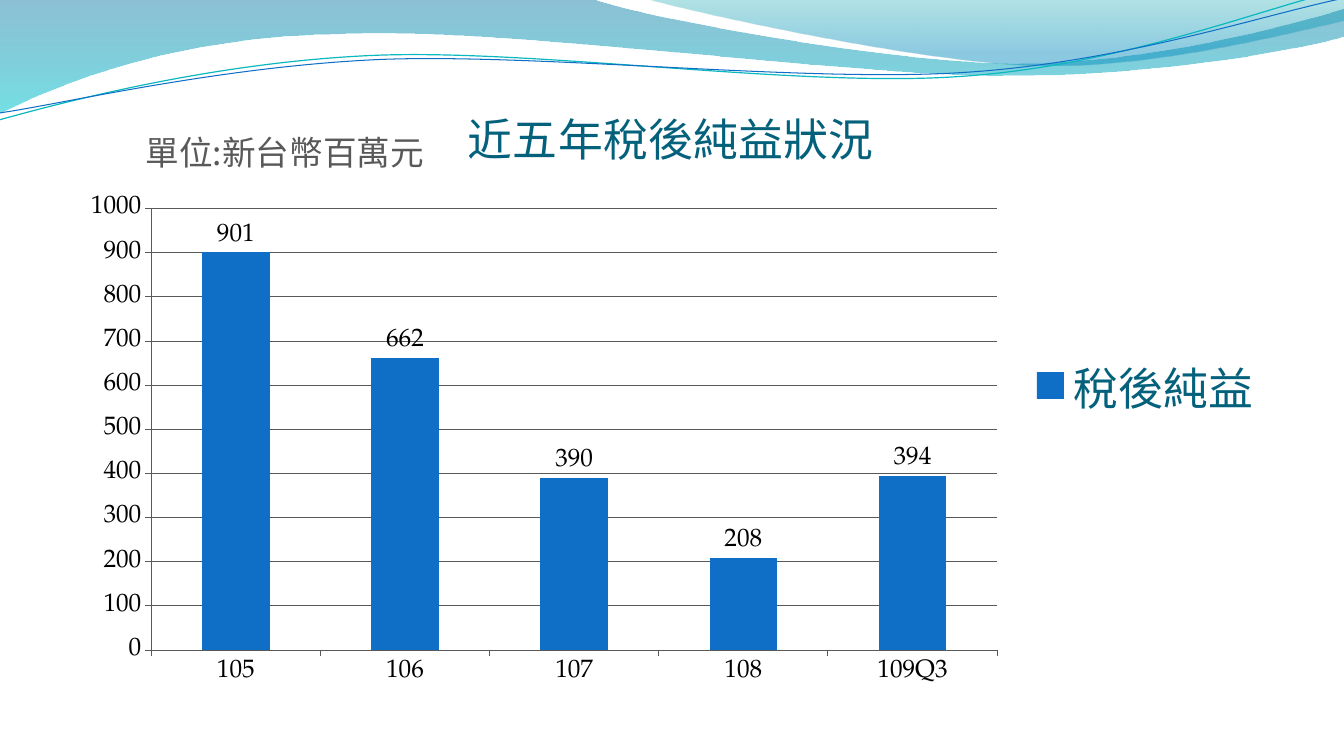
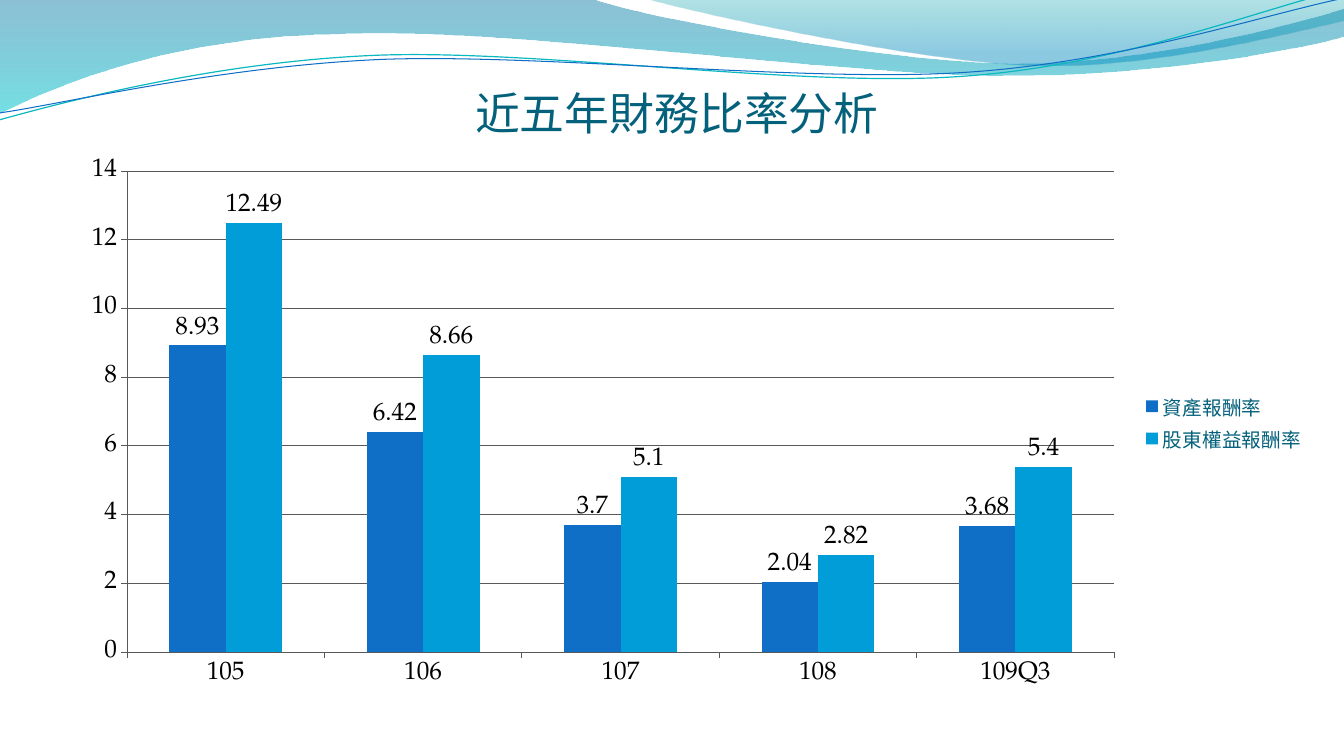
from lxml import etree
from pptx import Presentation
from pptx.chart.data import CategoryChartData
from pptx.dml.color import RGBColor
from pptx.enum.chart import XL_CHART_TYPE, XL_LABEL_POSITION, XL_LEGEND_POSITION, XL_TICK_MARK
from pptx.enum.text import MSO_ANCHOR, MSO_AUTO_SIZE, PP_ALIGN
from pptx.oxml.ns import qn
from pptx.util import Inches, Pt

COLUMNS = XL_CHART_TYPE.COLUMN_CLUSTERED
OUTSIDE_END = XL_LABEL_POSITION.OUTSIDE_END
LEGEND_RIGHT = XL_LEGEND_POSITION.RIGHT
TICK_OUT = XL_TICK_MARK.OUTSIDE
CENTER = PP_ALIGN.CENTER
BOTTOM = MSO_ANCHOR.BOTTOM
NO_AUTOFIT = MSO_AUTO_SIZE.NONE

# Shared style
CJK_FONT, NUMBER_FONT = "Noto Sans CJK SC", "TeX Gyre Pagella"
TITLE_COLOR, TITLE_SIZE = "04617B", 32
UNIT_COLOR, AXIS_COLOR, BLACK = "595959", "595959", "000000"
BLUE, LIGHT_BLUE, TEAL = "0F6FC6", "009DD9", "0AB8BF"

# Header waves: a pair is a straight segment, six numbers are a Bezier curve.
# Gradient stops are (position, colour, opacity in percent), top to bottom.
BANDS = [
    {"start": (0, 0),
     "segments": [(5.87, -0.01), (6.34, 0.17, 8.85, 0.63, 10.11, 0.63),
                  (11.38, 0.63, 12.78, 0.26, 13.33, 0.09), (13.35, 0.36),
                  (13.11, 0.44, 11.6, 0.76, 9.94, 0.75),
                  (8.29, 0.75, 5.09, 0.28, 3.43, 0.34),
                  (1.72, 0.36, 0.61, 0.83, -0.01, 1.13), (0, 0)],
     "stops": [(0, "0074A1", 45), (1, "00C6CF", 55)]},
    {"start": (6.39, -0.01),
     "segments": [(6.79, 0.11, 9.09, 0.62, 10.25, 0.65),
                  (11.41, 0.69, 12.82, 0.32, 13.33, 0.21), (13.33, 0), (6.39, -0.01)],
     "stops": [(0, "00A1A9", 30), (0.8, "008BBF", 45)]},
]
WAVE_LINES = [
    {"start": (-0.01, 1.19),
     "segments": [(0.64, 1.01, 2.11, 0.62, 3.69, 0.55),
                  (5.27, 0.48, 7.9, 0.87, 9.5, 0.76),
                  (11.1, 0.66, 12.52, 0.08, 13.31, -0.1)],
     "line": (TEAL, 0.85)},
    {"start": (0, 1.12),
     "segments": [(0.63, 1.03, 2.18, 0.66, 3.78, 0.59),
                  (5.37, 0.53, 7.96, 0.82, 9.55, 0.72),
                  (11.15, 0.62, 12.55, 0.14, 13.34, -0.02)],
     "line": (BLUE, 0.75)},
]

# Content; all places are inches on the slide
YEARS = ["105", "106", "107", "108", "109Q3"]
PROFIT_TITLE = "近五年稅後純益狀況"
PROFIT_UNIT = "單位:新台幣百萬元"
PROFIT_CHART = {
    "box": (0.67, 0.73, 12, 6.19), "plot": (1.5, 2.07, 8.39, 4.38),
    "title_corner": (4.56, 0.9), "scale": (1000, 100), "legend_size": 32,
    "series": [("稅後純益", [901, 662, 390, 208, 394], BLUE)],
}
RATIO_TITLE = "近五年財務比率分析"
RATIO_CHART = {
    "box": (0.67, 1.47, 12.39, 5.44), "plot": (1.26, 1.7, 9.79, 4.77),
    "scale": (14, 2), "legend_size": 14,
    "series": [("資產報酬率", [8.93, 6.42, 3.7, 2.04, 3.68], BLUE),
               ("股東權益報酬率", [12.49, 8.66, 5.1, 2.82, 5.4], LIGHT_BLUE)],
}


def color(hex_string):
    return RGBColor.from_string(hex_string)


def inches(values):
    return [Inches(value) for value in values]


def set_font(font, size, hex_string, name=CJK_FONT):
    font.size, font.name, font.bold = Pt(size), name, False
    font.color.rgb = color(hex_string)


def add_east_asian_fonts(element):
    """Use each Latin typeface for Chinese text as well."""
    for latin in list(element.iter(qn("a:latin"))):
        east_asian = etree.Element(qn("a:ea"), typeface=latin.get("typeface"))
        latin.addnext(east_asian)


def write_line(text_frame, text, size, hex_string):
    text_frame.text = text
    paragraph = text_frame.paragraphs[0]
    paragraph.alignment = CENTER
    set_font(paragraph.font, size, hex_string)


# Header waves
def add_wave(slide, wave, close):
    """Build the outline from its end points, then bend the curved segments."""
    segments = [inches(segment) for segment in wave["segments"]]
    builder = slide.shapes.build_freeform(*inches(wave["start"]))
    builder.add_line_segments([segment[-2:] for segment in segments], close=close)
    shape = builder.convert_to_shape()
    shape.shadow.inherit = False
    left, top = shape.left, shape.top
    for node, segment in zip(list(shape.element.iter(qn("a:lnTo"))), segments):
        if len(segment) == 2:
            continue
        curve = etree.Element(qn("a:cubicBezTo"))
        for x, y in zip(segment[::2], segment[1::2]):
            etree.SubElement(curve, qn("a:pt"), x=str(x - left), y=str(y - top))
        node.getparent().replace(node, curve)
    return shape


def fill_gradient(shape, stops):
    shape.fill.gradient()
    shape.fill.gradient_angle = 270
    for stop, (position, hex_string, _) in zip(shape.fill.gradient_stops, stops):
        stop.position = position
        stop.color.rgb = color(hex_string)
    for node, (_, _, opacity) in zip(shape.element.iter(qn("a:srgbClr")), stops):
        etree.SubElement(node, qn("a:alpha"), val=str(opacity * 1000))


def add_header_waves(presentation, slide):
    """Draw the waves on a slide, then move them to the master."""
    master_tree = presentation.slide_master.shapes.element
    for band in BANDS:
        shape = add_wave(slide, band, True)
        fill_gradient(shape, band["stops"])
        shape.line.fill.background()
        master_tree.append(shape.element)
    for wave_line in WAVE_LINES:
        shape = add_wave(slide, wave_line, False)
        shape.fill.background()
        hex_string, width = wave_line["line"]
        shape.line.color.rgb = color(hex_string)
        shape.line.width = Pt(width)
        master_tree.append(shape.element)


# Charts
def place_in_chart(element, chart_box, place):
    """Fix a chart part at a corner, or in a box, given in slide inches."""
    left, top, width, height = chart_box
    fractions = [(place[0] - left) / width, (place[1] - top) / height]
    layout = element.find(qn("c:layout"))
    if layout is None:
        layout = etree.Element(qn("c:layout"))
        element.insert(0, layout)
    manual = etree.SubElement(layout, qn("c:manualLayout"))
    if len(place) == 4:
        fractions += [place[2] / width, place[3] / height]
        etree.SubElement(manual, qn("c:layoutTarget"), val="inner")
    for mode in ("xMode", "yMode"):
        etree.SubElement(manual, qn(f"c:{mode}"), val="edge")
    for key, value in zip("xywh", fractions):
        etree.SubElement(manual, qn(f"c:{key}"), val=f"{value:.4f}")


def style_line(line):
    line.color.rgb = color(AXIS_COLOR)
    line.width = Pt(0.75)


def add_column_chart(slide, content, title=None):
    data = CategoryChartData()
    data.categories = YEARS
    for name, values, _ in content["series"]:
        data.add_series(name, values)
    box = content["box"]
    chart = slide.shapes.add_chart(COLUMNS, *inches(box), data).chart
    set_font(chart.font, 18, BLACK, NUMBER_FONT)

    plot = chart.plots[0]
    plot.gap_width, plot.overlap, plot.vary_by_categories = 150, 0, False
    for series, (_, _, hex_string) in zip(plot.series, content["series"]):
        series.format.fill.solid()
        series.format.fill.fore_color.rgb = color(hex_string)
    plot.has_data_labels = True
    plot.data_labels.show_value = True
    plot.data_labels.position = OUTSIDE_END

    value_axis = chart.value_axis
    value_axis.minimum_scale = 0
    value_axis.maximum_scale, value_axis.major_unit = content["scale"]
    value_axis.has_major_gridlines = True
    style_line(value_axis.major_gridlines.format.line)
    for axis in (chart.category_axis, value_axis):
        axis.major_tick_mark = TICK_OUT
        style_line(axis.format.line)

    chart.has_legend = True
    chart.legend.position = LEGEND_RIGHT
    chart.legend.include_in_layout = False
    set_font(chart.legend.font, content["legend_size"], TITLE_COLOR)

    chart.has_title = title is not None
    if title:
        write_line(chart.chart_title.text_frame, title, TITLE_SIZE, TITLE_COLOR)
        title_element = next(chart.element.iter(qn("c:title")))
        place_in_chart(title_element, box, content["title_corner"])
    place_in_chart(next(chart.element.iter(qn("c:plotArea"))), box, content["plot"])
    add_east_asian_fonts(chart.element)


# Slides
def build_profit_slide(slide):
    add_column_chart(slide, PROFIT_CHART, PROFIT_TITLE)
    unit = slide.shapes.add_textbox(*inches((1.22, 1.26, 3.21, 0.48)))
    unit.text_frame.word_wrap = True
    write_line(unit.text_frame, PROFIT_UNIT, 24, UNIT_COLOR)
    add_east_asian_fonts(unit.element)


def build_ratio_slide(slide):
    title = slide.shapes.title
    title.left, title.top, title.width, title.height = inches((1.84, 0.77, 9.75, 0.61))
    frame = title.text_frame
    frame.margin_left = frame.margin_right = frame.margin_bottom = 0
    frame.margin_top = Inches(0.05)
    frame.vertical_anchor = BOTTOM
    frame.auto_size = NO_AUTOFIT
    write_line(frame, RATIO_TITLE, TITLE_SIZE, TITLE_COLOR)
    add_east_asian_fonts(title.element)
    add_column_chart(slide, RATIO_CHART)


def main():
    presentation = Presentation()
    presentation.slide_width, presentation.slide_height = inches((13.33, 7.5))
    title_only, blank = presentation.slide_layouts[5], presentation.slide_layouts[6]
    profit_slide = presentation.slides.add_slide(blank)
    add_header_waves(presentation, profit_slide)
    build_profit_slide(profit_slide)
    build_ratio_slide(presentation.slides.add_slide(title_only))
    presentation.save("out.pptx")


if __name__ == "__main__":
    main()
